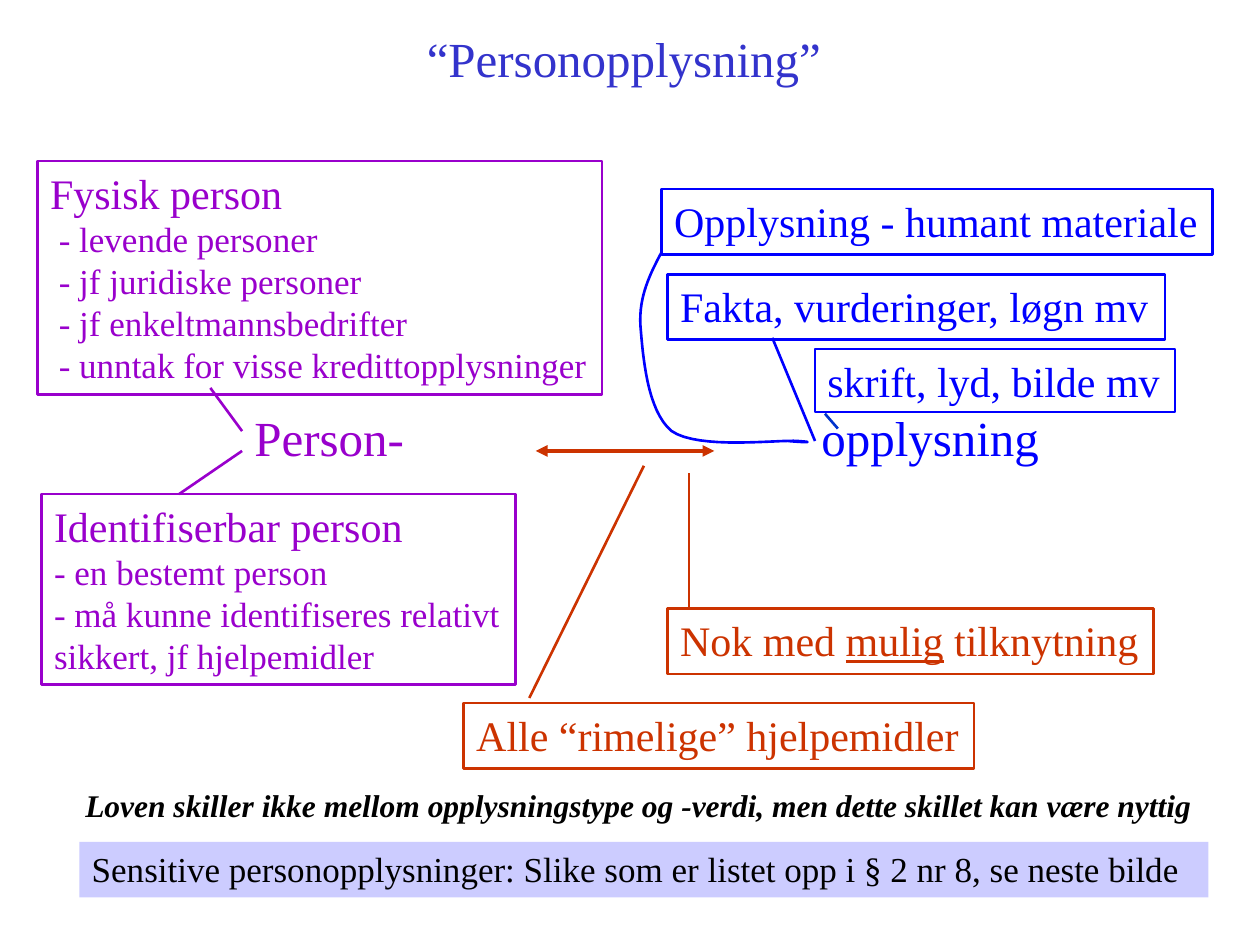
from dataclasses import dataclass

from lxml.etree import SubElement
from pptx import Presentation
from pptx.dml.color import RGBColor
from pptx.enum.shapes import MSO_CONNECTOR as Link, MSO_SHAPE as Shape
from pptx.enum.text import MSO_ANCHOR as Anchor, MSO_AUTO_SIZE as AutoSize, PP_ALIGN as Align
from pptx.oxml.ns import qn
from pptx.util import Cm, Pt


@dataclass(frozen=True)
class Theme:
    """Colours, type sizes and line widths of the slide."""
    font: str = "Times New Roman"
    title: str = "3333CC"
    person: str = "9900CC"
    info: str = "0000FF"
    info_dark: str = "0033CC"
    relation: str = "CC3300"
    band: str = "CCCCFF"
    ink: str = "000000"
    term: int = 28
    head: int = 24
    item: int = 20
    note: int = 18
    thin: float = 1.5
    thick: float = 2.25


@dataclass(frozen=True)
class Box:
    """A rectangle in centimetres."""
    left: float
    top: float
    width: float
    height: float

    def at(self, point):
        """Turn a point relative to the box into slide lengths."""
        return Cm(self.left + point[0]), Cm(self.top + point[1])

    def lengths(self):
        """Return left, top, width and height as slide lengths."""
        return Cm(self.left), Cm(self.top), Cm(self.width), Cm(self.height)


THEME = Theme()


def rgb(code):
    """Make a colour from its hex code."""
    return RGBColor.from_string(code)


def write(shape, lines, color, sizes, wrap=False, anchor=Anchor.TOP, align=Align.LEFT):
    """Write one paragraph per line; text between underscores is underlined."""
    frame = shape.text_frame
    frame.word_wrap = wrap
    frame.auto_size = AutoSize.NONE if wrap else AutoSize.SHAPE_TO_FIT_TEXT
    frame.vertical_anchor = anchor
    for index, line in enumerate(lines):
        para = frame.add_paragraph() if index else frame.paragraphs[0]
        para.alignment = align
        para.font.name = THEME.font
        para.font.size = Pt(sizes[min(index, len(sizes) - 1)])
        para.font.color.rgb = rgb(color)
        for number, part in enumerate(line.split("_")):
            span = para.add_run()
            span.text = part
            if number % 2:
                span.font.underline = True
    return frame


def draw_label(page, box, text, color, size, **layout):
    """Place a line of text without a frame."""
    return write(page.shapes.add_textbox(*box.lengths()), [text], color, [size], **layout)


def draw_line(page, box, start, end, color, width=THEME.thin, arrows=False):
    """Draw a straight line between two points of the box."""
    line = page.shapes.add_connector(Link.STRAIGHT, *box.at(start), *box.at(end))
    line.line.color.rgb = rgb(color)
    line.line.width = Pt(width)
    if arrows:
        outline = line.line._get_or_add_ln()
        for tag in ("a:headEnd", "a:tailEnd"):
            SubElement(outline, qn(tag), type="triangle")
    SubElement(line._element.spPr, qn("a:effectLst"))


def draw_callout(page, box, lines, color, lead=None, lead_color=None):
    """Place a framed note and the line that leads from it."""
    frame = page.shapes.add_shape(Shape.RECTANGLE, *box.lengths())
    frame.shadow.inherit = False
    frame.fill.background()
    frame.line.color.rgb = rgb(color)
    frame.line.width = Pt(THEME.thin)
    write(frame, lines, color, [THEME.head, THEME.item])
    if lead:
        draw_line(page, box, *lead, lead_color or color)


def bezier(points, share):
    """Return the point at a share of the way along a cubic curve."""
    rest = 1 - share
    weights = (rest ** 3, 3 * rest ** 2 * share, 3 * rest * share ** 2, share ** 3)
    return tuple(sum(w * p[axis] for w, p in zip(weights, points)) for axis in (0, 1))


def draw_curve(page, box, knots, color, steps=16):
    """Draw an open outline through joined cubic curves."""
    points = [box.at(bezier(knots[first:first + 4], step / steps))
              for first in range(0, len(knots) - 1, 3) for step in range(1, steps + 1)]
    builder = page.shapes.build_freeform(*box.at(knots[0]))
    builder.add_line_segments(points, close=False)
    curve = builder.convert_to_shape()
    curve.shadow.inherit = False
    curve.fill.background()
    curve.line.color.rgb = rgb(color)
    curve.line.width = Pt(THEME.thin)


def draw_terms(page, box):
    """Place the two halves of the word and the arrow between them."""
    draw_label(page, Box(box.left, box.top, 3.53, box.height), "Person-", THEME.person, THEME.term)
    draw_label(page, Box(box.left + 11.43, box.top, 4.9, box.height), "opplysning",
               THEME.info, THEME.term)
    draw_line(page, box, (5.92, 0.99), (9.52, 0.99), THEME.relation, THEME.thick, arrows=True)


def draw_person_notes(page, box):
    """Place the notes on what counts as a person."""
    draw_callout(page, Box(box.left + 0.08, box.top + 6.71, 9.55, 3.84),
                 ["Identifiserbar person", "- en bestemt person",
                  "- må kunne identifiseres relativt", "sikkert, jf hjelpemidler"],
                 THEME.person, ((2.77, 0), (4.04, -0.87)))
    draw_callout(page, Box(box.left, box.top, box.width, 4.7),
                 ["Fysisk person", " - levende personer", " - jf juridiske personer",
                  " - jf enkeltmannsbedrifter", " - unntak for visse kredittopplysninger"],
                 THEME.person, ((3.48, 4.57), (4.12, 5.44)))


def draw_info_notes(page, box):
    """Place the notes on what counts as information."""
    draw_callout(page, Box(box.left, box.top, box.width, 1.32),
                 ["Opplysning - humant materiale"], THEME.info)
    draw_curve(page, box, [(0, 1.27), (-0.23, 1.7), (-0.46, 2.16), (-0.43, 2.74),
                           (-0.38, 3.35), (-0.3, 4.47), (0.2, 4.88),
                           (0.74, 5.26), (2.36, 5.05), (2.74, 5.08),
                           (3.15, 5.11), (2.84, 5.11), (2.54, 5.08)], THEME.info)
    draw_callout(page, Box(box.left + 0.12, box.top + 1.73, 10.03, 1.3),
                 ["Fakta, vurderinger, løgn mv"], THEME.info, ((2.11, 1.27), (2.97, 3.35)))
    draw_callout(page, Box(box.left + 3.09, box.top + 3.23, 7.26, 1.27),
                 ["skrift, lyd, bilde mv"], THEME.info, ((0.2, 1.3), (0.46, 1.6)), THEME.info_dark)


def draw_relation_notes(page, box):
    """Place the notes on the link between person and information."""
    draw_callout(page, Box(box.left + 4.11, box.top, 9.8, 1.32),
                 ["Nok med _mulig_ tilknytning"], THEME.relation, ((0.43, 0), (0.43, -2.74)))
    draw_callout(page, Box(box.left, box.top + 1.9, 10.29, 1.32),
                 ["Alle “rimelige” hjelpemidler"], THEME.relation, ((1.32, -0.1), (3.63, -4.78)))


def draw_footer(page, box):
    """Place the closing remark and the band below it."""
    band = page.shapes.add_shape(
        Shape.RECTANGLE, *Box(box.left + 0.13, box.top + 1.25, 22.76, 1.12).lengths())
    band.shadow.inherit = False
    band.fill.solid()
    band.fill.fore_color.rgb = rgb(THEME.band)
    band.line.fill.background()
    write(band, ["Sensitive personopplysninger: Slike som er listet opp i § 2 nr 8, se neste bilde"],
          THEME.ink, [THEME.item])
    remark = draw_label(
        page, Box(box.left, box.top, box.width, 1.02),
        "Loven skiller ikke mellom opplysningstype og -verdi, men dette skillet kan være nyttig",
        THEME.ink, THEME.note)
    remark.paragraphs[0].font.bold = True
    remark.paragraphs[0].font.italic = True


def main():
    """Build the slide and save it."""
    deck = Presentation()
    deck.slide_width, deck.slide_height = Cm(25.4), Cm(19.05)
    page = deck.slides.add_slide(deck.slide_layouts[6])
    draw_label(page, Box(1.9, 0.43, 21.6, 1.47), "“Personopplysning” ", THEME.title, THEME.term,
               wrap=True, anchor=Anchor.MIDDLE, align=Align.CENTER)
    draw_terms(page, Box(4.88, 8.1, 16.33, 1.45))
    draw_person_notes(page, Box(0.76, 3.25, 11.38, 10.55))
    draw_info_notes(page, Box(13.34, 3.81, 11.1, 5.1))
    draw_relation_notes(page, Box(9.35, 12.27, 13.91, 3.22))
    draw_footer(page, Box(1.47, 15.72, 23.04, 2.37))
    deck.save("out.pptx")


if __name__ == "__main__":
    main()
